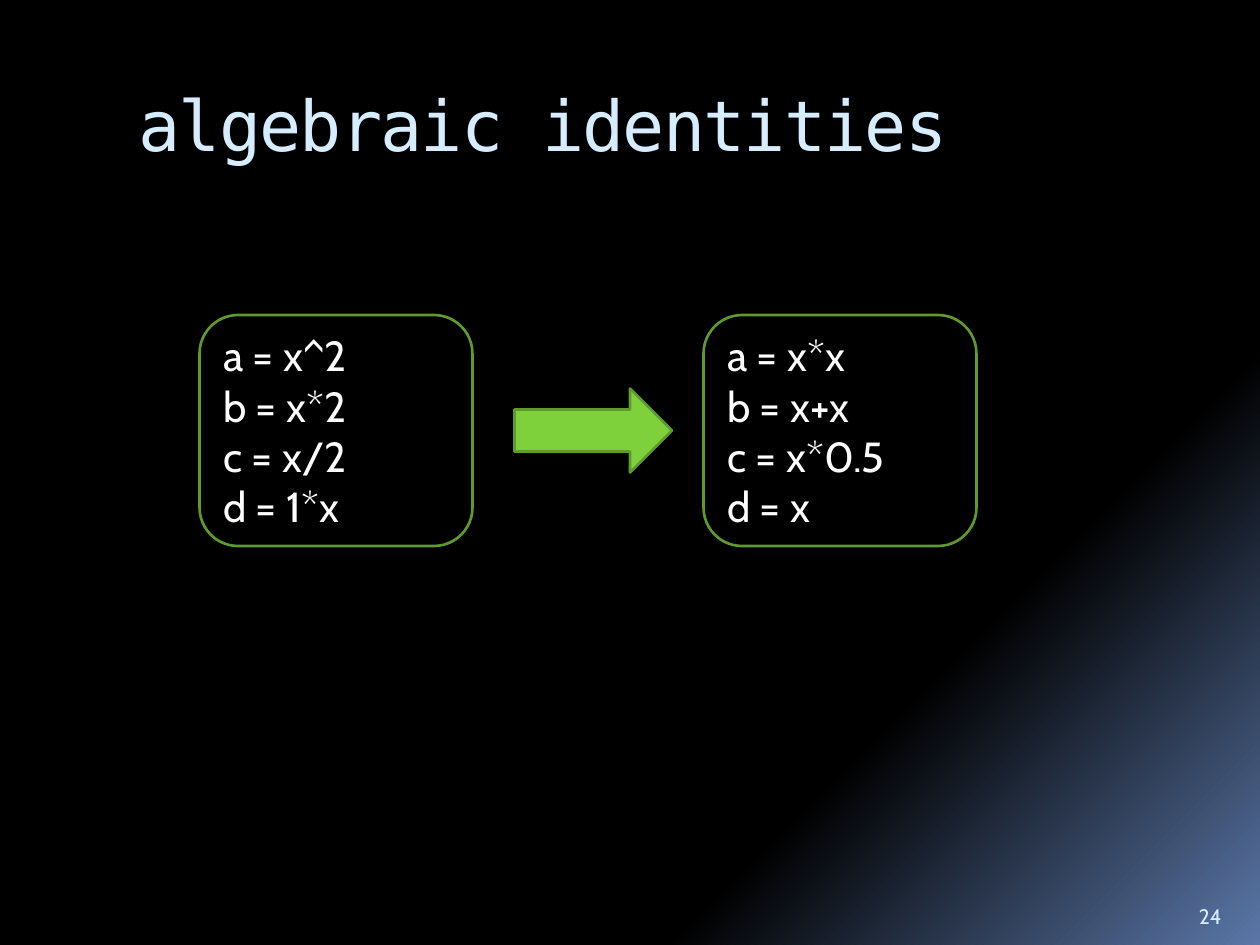
"""Build the slide on algebraic identities, with rewrites before and after."""
from copy import deepcopy
from dataclasses import dataclass

from pptx import Presentation
from pptx.dml.color import RGBColor as RGB
from pptx.enum.shapes import MSO_SHAPE as SHAPE
from pptx.enum.text import MSO_ANCHOR as ANCHOR, PP_ALIGN as ALIGN
from pptx.oxml.ns import qn
from pptx.shapes.autoshape import Shape
from pptx.slide import Slide
from pptx.util import Emu, Pt

SCALE = 7620
HEX = {
    "black": "000000",
    "blue": "5B77A8",
    "pale": "D6ECFF",
    "white": "FFFFFF",
    "green": "7FD13B",
    "edge": "5E9B2C",
}
STOPS = ((0.65, "black"), (0.73, "black"), (1, "blue"))


@dataclass(frozen=True)
class Area:
    left: int
    top: int
    width: int
    height: int

    def emu(self) -> tuple[Emu, ...]:
        return tuple(px(n) for n in (self.left, self.top, self.width, self.height))


@dataclass(frozen=True)
class Label:
    area: Area
    text: str
    font: str
    size: int
    frame: dict


@dataclass(frozen=True)
class Panel:
    left: int
    lines: tuple[str, ...]


LABELS = (
    Label(Area(120, 67, 1020, 120), "algebraic identities", "DejaVu Sans Mono", 40,
          {"vertical_anchor": ANCHOR.TOP, "margin_top": Emu(11 * SCALE)}),
    Label(Area(1130, 842, 60, 48), "24", "Cabin", 12,
          {"vertical_anchor": ANCHOR.BOTTOM}),
)
PANELS = (
    Panel(190, ("a = x^2", "b = x*2", "c = x/2", "d = 1*x")),
    Panel(670, ("a = x*x", "b = x+x", "c = x*0.5", "d = x")),
)
ARROW = Area(490, 370, 150, 80)


def px(count: int) -> Emu:
    return Emu(count * SCALE)


def tint(name: str) -> RGB:
    return RGB.from_string(HEX[name])


def assign(target: object, values: dict) -> None:
    for key, value in values.items():
        setattr(target, key, value)


def write(shape: Shape, lines: tuple[str, ...], font: dict, hue: str, frame: dict) -> None:
    body = shape.text_frame
    assign(body, {"word_wrap": True, **frame})
    body.text = "\n".join(lines)
    for line in body.paragraphs:
        line.alignment = ALIGN.LEFT
        for run in line.runs:
            assign(run.font, font)
            run.font.color.rgb = tint(hue)


def paint(slide: Slide) -> None:
    fill = slide.background.fill
    fill.gradient()
    fill.gradient_angle = 315
    stops = next(slide.element.iter(qn("a:gsLst")))
    stops.append(deepcopy(stops[-1]))
    for stop, (place, hue) in zip(fill.gradient_stops, STOPS):
        stop.position = place
        stop.color.rgb = tint(hue)


def draw_label(slide: Slide, label: Label) -> Shape:
    box = slide.shapes.add_textbox(*label.area.emu())
    font = {"name": label.font, "size": Pt(label.size)}
    write(box, (label.text,), font, "pale", label.frame)
    return box


def draw_shape(slide: Slide, kind: SHAPE, area: Area) -> Shape:
    shape = slide.shapes.add_shape(kind, *area.emu())
    shape.shadow.inherit = False
    shape.line.width = Pt(1.5)
    shape.line.color.rgb = tint("edge")
    return shape


def draw_panel(slide: Slide, panel: Panel) -> None:
    box = draw_shape(slide, SHAPE.ROUNDED_RECTANGLE, Area(panel.left, 300, 260, 220))
    box.fill.background()
    font = {"name": "Cabin", "size": Pt(24)}
    write(box, panel.lines, font, "white", {"vertical_anchor": ANCHOR.MIDDLE})


def draw_arrow(slide: Slide, area: Area) -> None:
    arrow = draw_shape(slide, SHAPE.RIGHT_ARROW, area)
    arrow.fill.solid()
    arrow.fill.fore_color.rgb = tint("green")


def main() -> None:
    deck = Presentation()
    assign(deck, {"slide_width": px(1200), "slide_height": px(900)})
    slide = deck.slides.add_slide(deck.slide_layouts[6])
    paint(slide)
    title, _ = [draw_label(slide, label) for label in LABELS]
    title.text_frame.paragraphs[0].runs[0].font._element.set("spc", "-100")
    for panel in PANELS:
        draw_panel(slide, panel)
    draw_arrow(slide, ARROW)
    deck.save("out.pptx")


if __name__ == "__main__":
    main()
